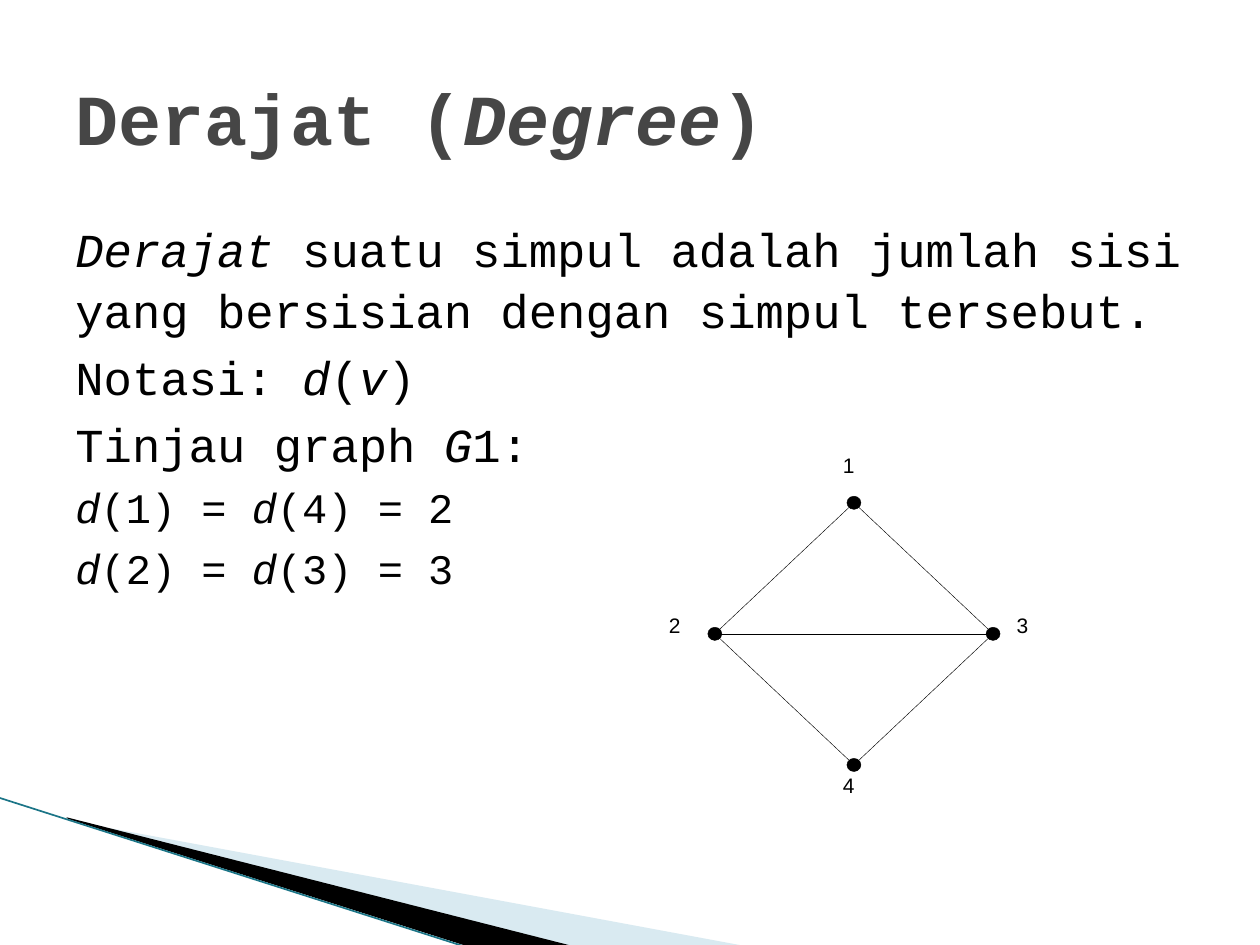
from pptx import Presentation
from pptx.util import Pt
from pptx.dml.color import RGBColor
from pptx.enum.shapes import MSO_CONNECTOR, MSO_SHAPE
from pptx.enum.text import MSO_ANCHOR
from pptx.oxml.ns import qn
from lxml import etree


def rgb(color):
    return RGBColor.from_string(color)


def add_line(start, end, color, width):
    c = s.shapes.add_connector(MSO_CONNECTOR.STRAIGHT, *map(Pt, start + end))
    c.line.color.rgb = rgb(color)
    c.line.width = Pt(width)
    etree.SubElement(c._element.spPr, qn("a:effectLst"))


prs = Presentation()
prs.slide_width, prs.slide_height = Pt(720), Pt(540)
s = prs.slides.add_slide(prs.slide_layouts[6])

# Corner wedges: points, colour, opacity in percent
wedges = [
    ([(39.6, 468.7), (428.4, 540.7), (328.3, 540.7), (39.6, 468)], "A0CBDC", 40),
    ([(38.2, 467.3), (329, 540.7), (267.8, 541.4), (38.9, 468)], "000000", 100),
]
for points, color, opacity in wedges:
    fb = s.shapes.build_freeform(*points[0], scale=Pt(1))
    fb.add_line_segments(points[1:])
    sp = fb.convert_to_shape()
    sp.shadow.inherit = False
    sp.fill.solid()
    sp.fill.fore_color.rgb = rgb(color)
    sp.line.fill.background()
    if opacity < 100:
        clr = sp._element.spPr.find(".//" + qn("a:srgbClr"))
        etree.SubElement(clr, qn("a:alpha"), val=str(opacity * 1000))
add_line((-0.7, 455.8), (267.1, 541.4), "1B7587", 0.95)

# Title and body: (size, runs), where every second run is italic
title = [(41, ["Derajat (", "Degree", ")"])]
body = [
    (27, ["", "Derajat", " suatu simpul adalah jumlah sisi yang bersisian "
          "dengan simpul tersebut."]),
    (27, ["Notasi: ", "d", "(", "v", ")"]),
    (27, ["Tinjau graph ", "G", "1:"]),
    (24, ["", "d", "(1) = ", "d", "(4) = 2"]),
    (24, ["", "d", "(2) = ", "d", "(3) = 3"]),
]
for top, height, paragraphs, color in [(21.6, 90, title, "464646"),
                                       (116.6, 356.4, body, "000000")]:
    tf = s.shapes.add_textbox(Pt(36), Pt(top), Pt(648), Pt(height)).text_frame
    tf.word_wrap = True
    if paragraphs is title:
        tf.vertical_anchor = MSO_ANCHOR.MIDDLE
    else:
        tf.margin_top = Pt(7.6)
    for i, (size, runs) in enumerate(paragraphs):
        p = tf.add_paragraph() if i else tf.paragraphs[0]
        if i:
            p.space_before = Pt(4)
        if paragraphs is body:
            p.line_spacing = 1.06
        p.font.name = "Courier New"
        p.font.size = Pt(size)
        p.font.bold = paragraphs is title
        p.font.color.rgb = rgb(color)
        for j, text in enumerate(runs):
            if text:
                r = p.add_run()
                r.text = text
                r.font.italic = j % 2 == 1

# Graph G1: vertices on a diamond, with label positions
cx, cy, dx, dy = 488, 362.2, 79.5, 74.9
vertices = {1: (cx, cy - dy), 2: (cx - dx, cy), 3: (cx + dx, cy), 4: (cx, cy + dy)}
labels = {1: (481.7, 258.5), 2: (382.3, 350), 3: (581, 350), 4: (481.7, 441.4)}
dot_w, dot_h = 8, 7.5
for x, y in vertices.values():
    sp = s.shapes.add_shape(MSO_SHAPE.OVAL, Pt(x - dot_w / 2), Pt(y - dot_h / 2),
                            Pt(dot_w), Pt(dot_h))
    sp.shadow.inherit = False
    sp.fill.solid()
    sp.fill.fore_color.rgb = rgb("000000")
    sp.line.color.rgb = rgb("000000")
    sp.line.width = Pt(0.25)
for a, b in [(1, 2), (2, 4), (1, 3), (3, 4), (2, 3)]:
    add_line(vertices[a], vertices[b], "000000", 0.25)
for number, (x, y) in labels.items():
    tf = s.shapes.add_textbox(Pt(x), Pt(y), Pt(6.7), Pt(14.4)).text_frame
    tf.margin_left = tf.margin_right = tf.margin_top = tf.margin_bottom = 0
    tf.word_wrap = False
    p = tf.paragraphs[0]
    p.text = str(number)
    p.font.name = "Arial"
    p.font.size = Pt(12)
    p.font.color.rgb = rgb("000000")

prs.save("out.pptx")
